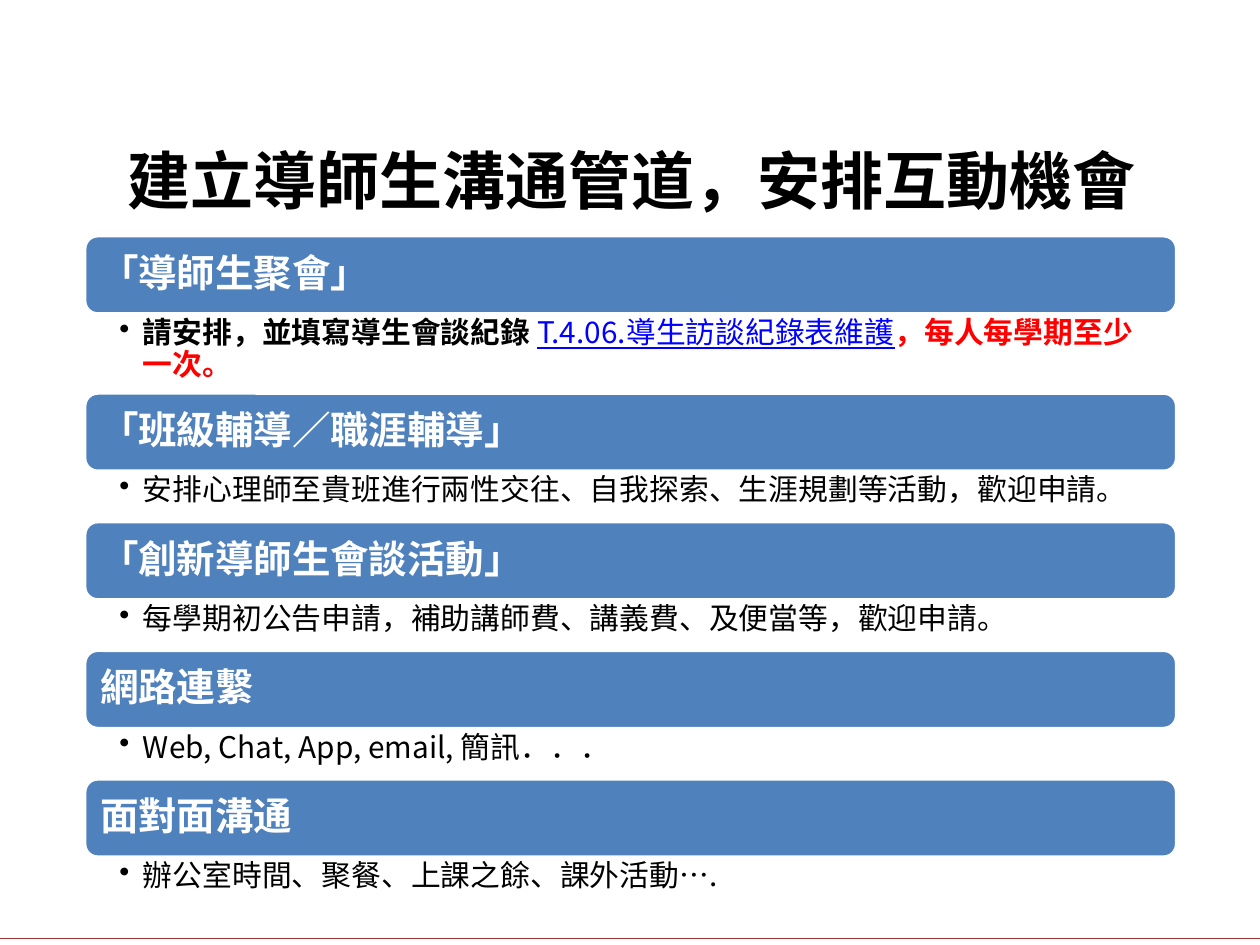
from lxml.etree import SubElement
from pptx import Presentation
from pptx.dml.color import RGBColor
from pptx.enum.shapes import MSO_CONNECTOR, MSO_SHAPE
from pptx.enum.text import MSO_ANCHOR, PP_ALIGN
from pptx.oxml.ns import qn
from pptx.util import Pt

THEME = {
    "font": "Noto Sans CJK SC",
    "title_size": 36, "heading_size": 22, "body_size": 17,
    "black": "000000", "white": "FFFFFF", "bar": "4F81BD",
    "link": "0000FF", "alert": "FF0000", "rule": "953735",
}

TITLE = "建立導師生溝通管道，安排互動機會"
# Each section: heading, height of its body, body runs as (text, colour, bold, underline)
SECTIONS = [
    ("「導師生聚會」", 45.2, [
        ("請安排，並填寫導生會談紀錄 ", "black", True, False),
        ("T.4.06.導生訪談紀錄表維護", "link", False, True),
        ("，每人每學期至少一次。", "alert", True, False),
    ]),
    ("「班級輔導／職涯輔導」", 28.8, [
        ("安排心理師至貴班進行兩性交往、自我探索、生涯規劃等活動，歡迎申請。", "black", False, False),
    ]),
    ("「創新導師生會談活動」", 28.8, [
        ("每學期初公告申請，補助講師費、講義費、及便當等，歡迎申請。", "black", False, False),
    ]),
    ("網路連繫", 28.8, [("Web, Chat, App, email, 簡訊．．．", "black", False, False)]),
    ("面對面溝通", 28.8, [("辦公室時間、聚餐、上課之餘、課外活動….", "black", False, False)]),
]

SLIDE_WIDTH, SLIDE_HEIGHT = 720, 540
LEFT, WIDTH = 48.4, 624
FIRST_TOP, BAR_HEIGHT = 134.7, 44.7
RULE_TOP = 536.4


def color(name):
    return RGBColor.from_string(THEME[name])


def add_run(paragraph, text, size, color_name, bold=False, underline=False):
    run = paragraph.add_run()
    run.text = text
    font = run.font
    font.name = THEME["font"]
    font.size = Pt(THEME[size])
    font.bold = bold
    font.underline = underline
    font.color.rgb = color(color_name)
    east_asian = SubElement(run._r.rPr, qn("a:ea"))
    east_asian.set("typeface", THEME["font"])


def set_frame(shape, margins, anchor):
    """Wrap the text, with margins as left, top, right, bottom; return the first paragraph."""
    frame = shape.text_frame
    frame.word_wrap = True
    frame.vertical_anchor = anchor
    frame.margin_left, frame.margin_top, frame.margin_right, frame.margin_bottom = map(Pt, margins)
    return frame.paragraphs[0]


def add_title(slide):
    box = slide.shapes.add_textbox(Pt(59.8), Pt(77), Pt(602), Pt(51))
    paragraph = set_frame(box, (7.2, 3.6, 7.2, 3.6), MSO_ANCHOR.MIDDLE)
    paragraph.alignment = PP_ALIGN.CENTER
    add_run(paragraph, TITLE, "title_size", "black", bold=True)


def add_bar(slide, top, heading):
    bar = slide.shapes.add_shape(
        MSO_SHAPE.ROUNDED_RECTANGLE, Pt(LEFT), Pt(top), Pt(WIDTH), Pt(BAR_HEIGHT))
    bar.shadow.inherit = False
    bar.fill.solid()
    bar.fill.fore_color.rgb = color("bar")
    bar.line.color.rgb = color("white")
    bar.line.width = Pt(2)
    paragraph = set_frame(bar, (6.6,) * 4, MSO_ANCHOR.MIDDLE)
    paragraph.alignment = PP_ALIGN.LEFT
    paragraph.line_spacing = 0.9
    add_run(paragraph, heading, "heading_size", "white", bold=True)


def add_body(slide, top, height, runs):
    box = slide.shapes.add_textbox(Pt(LEFT), Pt(top), Pt(WIDTH), Pt(height))
    paragraph = set_frame(box, (19.8, 2.2, 12.2, 2.2), MSO_ANCHOR.TOP)
    paragraph.level = 1
    paragraph.line_spacing = 0.9
    properties = paragraph._p.get_or_add_pPr()
    properties.set("marL", str(Pt(13.5)))
    properties.set("indent", str(-Pt(13.5)))
    SubElement(properties, qn("a:buChar")).set("char", "•")
    for text, color_name, bold, underline in runs:
        add_run(paragraph, text, "body_size", color_name, bold, underline)


def add_rule(slide):
    rule = slide.shapes.add_connector(
        MSO_CONNECTOR.STRAIGHT, Pt(0), Pt(RULE_TOP), Pt(SLIDE_WIDTH), Pt(RULE_TOP))
    rule.line.color.rgb = color("rule")
    rule.line.width = Pt(0.75)
    SubElement(rule._element.spPr, qn("a:effectLst"))


def main():
    presentation = Presentation()
    presentation.slide_width = Pt(SLIDE_WIDTH)
    presentation.slide_height = Pt(SLIDE_HEIGHT)
    slide = presentation.slides.add_slide(presentation.slide_layouts[6])
    add_rule(slide)
    add_title(slide)
    top = FIRST_TOP
    for heading, body_height, runs in SECTIONS:
        add_bar(slide, top, heading)
        add_body(slide, top + BAR_HEIGHT, body_height, runs)
        top += BAR_HEIGHT + body_height
    presentation.save("out.pptx")


if __name__ == "__main__":
    main()
